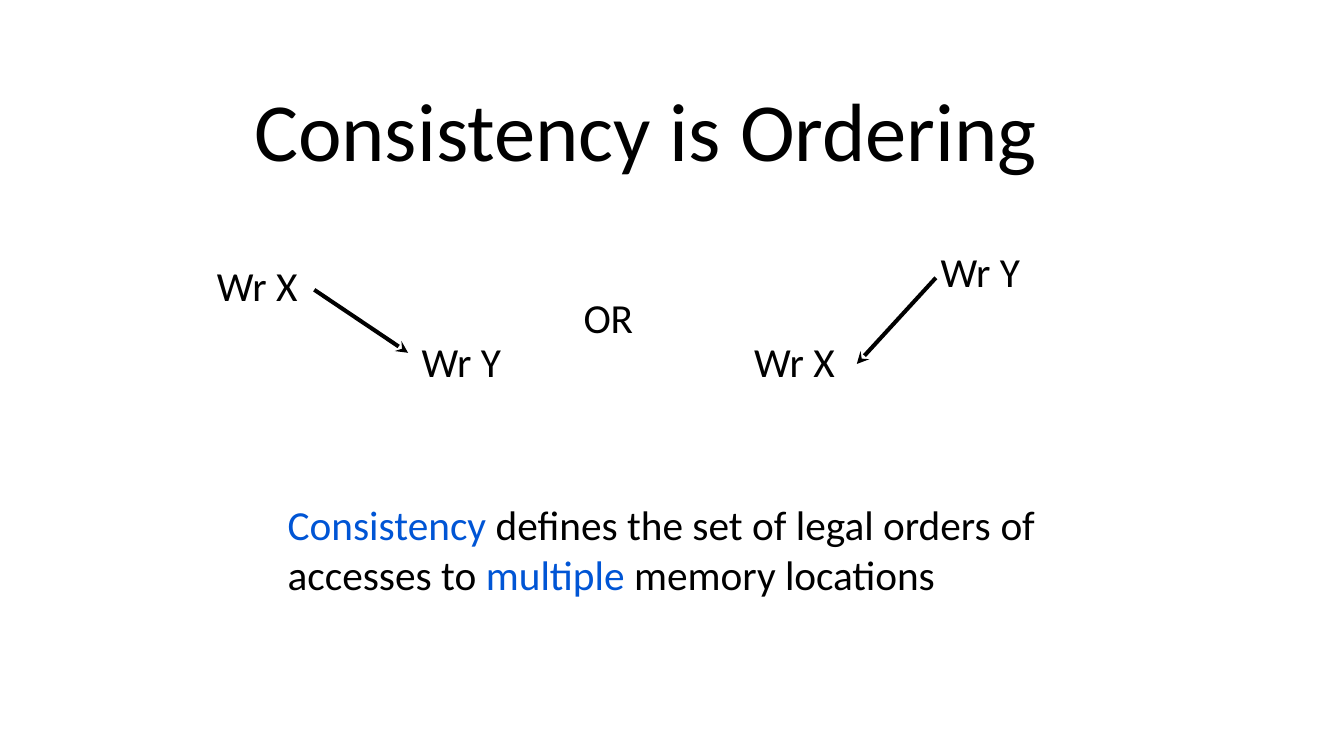
from lxml import etree
from pptx import Presentation
from pptx import util as u
from pptx.dml.color import RGBColor
from pptx.enum import shapes, text
from pptx.oxml import ns

COLORS = {"ink": "000000", "accent": "0055D5", "paper": "FFFFFF"}
FONT = "Calibri"
BODY_SIZE = 29.5


def add_text(page, box, spans, size=BODY_SIZE, inset=(0.9, 0.9), before=1):
    """Add a text box; each span is (words, color name, letter spacing)."""
    frame = page.shapes.add_textbox(*map(u.Pt, box)).text_frame
    frame.word_wrap = True
    frame.auto_size = text.MSO_AUTO_SIZE.NONE
    frame.margin_left, frame.margin_top = map(u.Pt, inset)
    frame.margin_right = frame.margin_bottom = 0
    para = frame.paragraphs[0]
    para.alignment = text.PP_ALIGN.LEFT
    para.space_before = u.Pt(before)
    for words, color, spacing in spans:
        span = para.add_run()
        span.text = words
        span.font.name = FONT
        span.font.size = u.Pt(size)
        span.font.color.rgb = RGBColor.from_string(COLORS[color])
        span.font._element.set("spc", str(round(spacing * 100)))


def add_arrow(page, start, end):
    """Draw a straight black arrow from start to end."""
    line = page.shapes.add_connector(
        shapes.MSO_CONNECTOR.STRAIGHT, *map(u.Pt, (*start, *end)))
    line.line.width = u.Pt(2.9)
    line.line.color.rgb = RGBColor.from_string(COLORS["ink"])
    etree.SubElement(line.line._get_or_add_ln(), ns.qn("a:tailEnd"), type="stealth")
    etree.SubElement(line._element.spPr, ns.qn("a:effectLst"))


def add_title(page, box):
    """Place the slide title, indented from the left of its box."""
    add_text(page, box, [("Consistency is ", "ink", 0), ("Ordering", "ink", -0.1)],
             size=59, inset=(170, 48.2))


def add_write(page, left, top, variable):
    """Place a label for a write to one variable."""
    spacing = {"X": -0.6, "Y": -0.5}[variable]
    add_text(page, (left, top, 60, 37.5),
             [("Wr ", "ink", 0), (variable, "ink", spacing)])


def add_orders(page, box):
    """Place the two possible write orders side by side with OR between."""
    left, top, width, height = box
    low = top + height - 37.5
    add_write(page, left, top + 10, "X")
    add_write(page, left + 146.2, low, "Y")
    add_arrow(page, (left + 70.5, top + 32), (left + 137.5, top + 77))
    add_text(page, (left + 262, top + 33, 38, 37.5), [("OR", "ink", -0.2)])
    add_write(page, left + 383.8, low, "X")
    add_write(page, left + width - 60, top, "Y")
    add_arrow(page, (left + 514.5, top + 23.4), (left + 458, top + 85))


def add_definition(page, box):
    """Place the definition with its key words in the accent color."""
    add_text(page, box, [
        ("Consistency ", "accent", 0),
        ("defines the set of legal orders ", "ink", 0),
        ("of ", "ink", -0.2),
        ("accesses to ", "ink", 0),
        ("multiple ", "accent", 0),
        ("memory ", "ink", 0),
        ("locations", "ink", -0.1)])


def main():
    """Build and save the one-slide deck."""
    deck = Presentation()
    deck.slide_width, deck.slide_height = u.Pt(960), u.Pt(540)
    page = deck.slides.add_slide(deck.slide_layouts[6])
    page.background.fill.solid()
    page.background.fill.fore_color.rgb = RGBColor.from_string(COLORS["paper"])
    add_title(page, (11.5, 8, 937.5, 121))
    add_orders(page, (154, 175, 577, 101.5))
    add_definition(page, (204.5, 355.7, 539.3, 72.7))
    deck.save("out.pptx")


if __name__ == "__main__":
    main()
